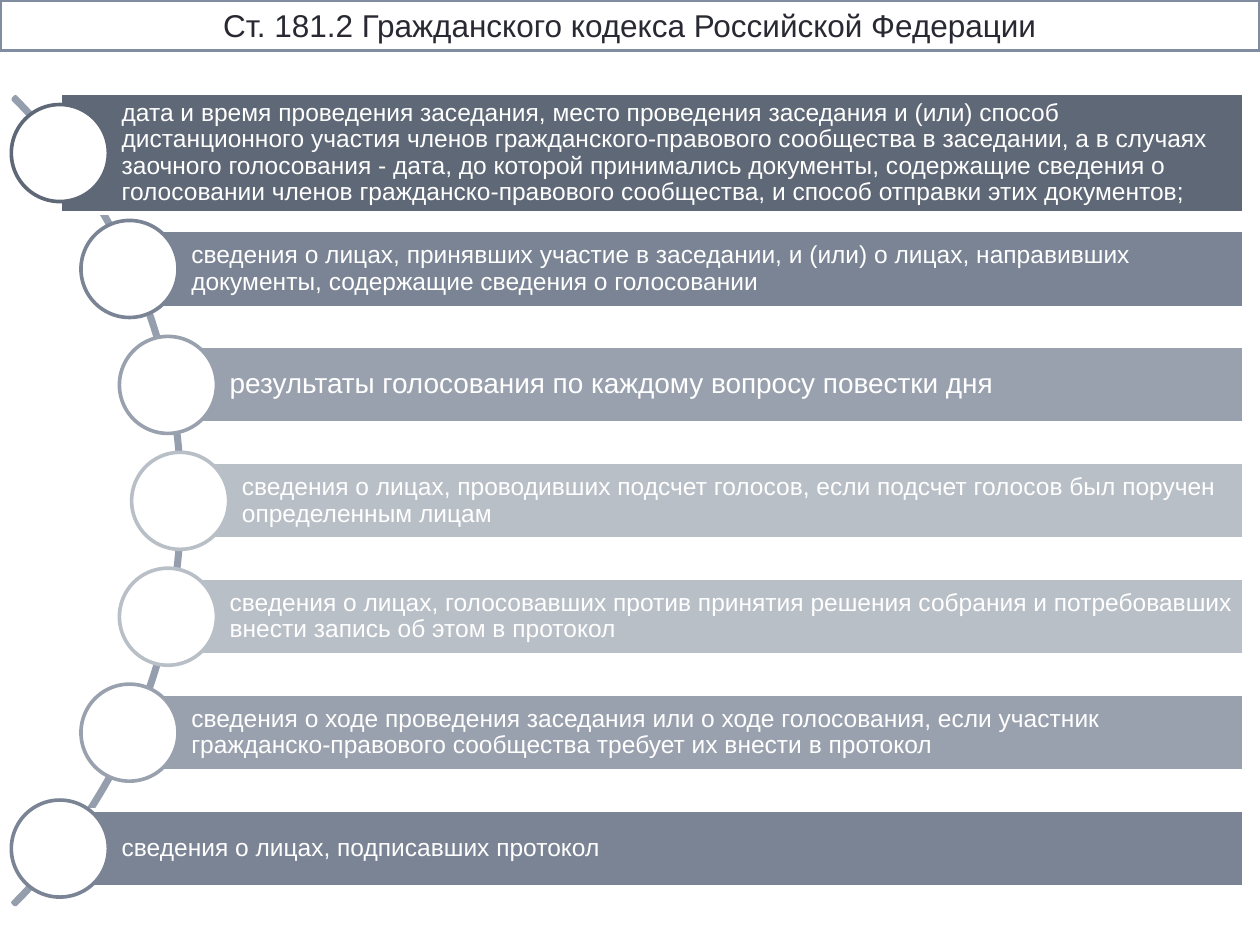
import pptx
import pptx.dml.color
import pptx.enum.shapes
import pptx.enum.text
import pptx.util

SHAPES = pptx.enum.shapes.MSO_SHAPE
ALIGN = pptx.enum.text.PP_ALIGN
ANCHOR = pptx.enum.text.MSO_ANCHOR

COLORS = {
    "white": "FFFFFF", "ink": "292934", "frame": "808DA0", "arc": "949EAD",
    "dark": "5F6876", "slate": "7A8494", "grey": "9AA1AE", "pale": "B9BFC7",
}

TITLE = "Ст. 181.2 Гражданского кодекса Российской Федерации"

# Text, colour, node centre in columns, bar height in rows, text size
ITEMS = [
    ("дата и время проведения заседания, место проведения заседания и (или) способ "
     "дистанционного участия членов гражданского-правового сообщества в заседании, "
     "а в случаях заочного голосования - дата, до которой принимались документы, "
     "содержащие сведения о голосовании членов гражданско-правового сообщества, "
     "и способ отправки этих документов;", "dark", 4.75, 9.5, 14),
    ("сведения о лицах, принявших участие в заседании, и (или) о лицах, направивших "
     "документы, содержащие сведения о голосовании", "slate", 10.28, 6.1, 14),
    ("результаты голосования по каждому вопросу повестки дня",
     "grey", 13.33, 6.1, 16),
    ("сведения о лицах, проводивших подсчет голосов, если подсчет голосов был поручен "
     "определенным лицам", "pale", 14.3, 6.1, 14),
    ("сведения о лицах, голосовавших против принятия решения собрания и потребовавших "
     "внести запись об этом в протокол", "pale", 13.33, 6.1, 14),
    ("сведения о ходе проведения заседания или о ходе голосования, если участник "
     "гражданско-правового сообщества требует их внести в протокол",
     "grey", 10.28, 6.1, 14),
    ("сведения о лицах, подписавших протокол", "slate", 4.75, 6.1, 14),
]

# Grid positions
FIRST_CENTER, PITCH = 12.15, 9.2
BAR_RIGHT, NODE_SIZE = 98.7, 7.7
ARC_BOX = (-76.2, -5.6, 90.7, 90.7)
ARC_ADJUSTMENTS = (189, 27, 0.003)


class SlideBuilder:
    """Style and current slide; lengths are cells of a 100 by 75 grid."""

    columns, rows = 100, 75
    font_name = "Arial"
    line_width = pptx.util.Pt(2.08)
    bar_frame = {
        "word_wrap": True,
        "vertical_anchor": ANCHOR.MIDDLE,
        "margin_left": pptx.util.Inches(0.49),
        "margin_top": pptx.util.Inches(0.04),
        "margin_right": pptx.util.Inches(0.04),
        "margin_bottom": pptx.util.Inches(0.04),
    }
    title_frame = {
        "word_wrap": True,
        "auto_size": pptx.enum.text.MSO_AUTO_SIZE.NONE,
        "vertical_anchor": ANCHOR.MIDDLE,
    }

    def __init__(self, deck):
        self.cell_width = deck.slide_width / self.columns
        self.cell_height = deck.slide_height / self.rows
        self.page = deck.slides.add_slide(deck.slide_layouts[5])

    def color(self, name):
        return pptx.dml.color.RGBColor.from_string(COLORS[name])

    def apply(self, target, values):
        for name, value in values.items():
            setattr(target, name, value)

    def place(self, left, top, width, height):
        return (round(left * self.cell_width), round(top * self.cell_height),
                round(width * self.cell_width), round(height * self.cell_height))

    def paint(self, shape, fill, line):
        if fill:
            shape.fill.solid()
            shape.fill.fore_color.rgb = self.color(fill)
        else:
            shape.fill.background()
        shape.line.color.rgb = self.color(line)
        shape.line.width = self.line_width

    def set_text(self, shape, text, size, color, frame, paragraph):
        self.apply(shape.text_frame, frame)
        para = shape.text_frame.paragraphs[0]
        self.apply(para, paragraph)
        span = para.add_run()
        span.text = text
        self.apply(span.font, {"name": self.font_name, "size": pptx.util.Pt(size)})
        span.font.color.rgb = self.color(color)

    def title(self, text, box):
        shape = self.page.shapes.title
        self.apply(shape, dict(zip(("left", "top", "width", "height"),
                                   self.place(*box))))
        self.paint(shape, "white", "frame")
        self.set_text(shape, text, 18, "ink", self.title_frame,
                      {"alignment": ALIGN.CENTER})

    def shape(self, kind, box, fill, line):
        shape = self.page.shapes.add_shape(kind, *self.place(*box))
        shape.shadow.inherit = False
        self.paint(shape, fill, line)
        return shape

    def arc(self, box, adjustments):
        shape = self.shape(SHAPES.BLOCK_ARC, box, None, "arc")
        for index, value in enumerate(adjustments):
            shape.adjustments[index] = value

    def bar(self, text, size, box, color):
        shape = self.shape(SHAPES.RECTANGLE, box, color, "white")
        self.set_text(shape, text, size, "white", self.bar_frame,
                      {"alignment": ALIGN.LEFT, "line_spacing": 0.9})

    def node(self, center_x, center_y, color):
        half = NODE_SIZE / 2
        box = (center_x - half, center_y - half, NODE_SIZE, NODE_SIZE)
        self.shape(SHAPES.OVAL, box, "white", color)


def main():
    deck = pptx.Presentation()
    deck.slide_width = pptx.util.Inches(10)
    deck.slide_height = pptx.util.Inches(7.5)
    builder = SlideBuilder(deck)

    # Heading
    builder.title(TITLE, (0, 0, 100, 4))

    # Arc behind the list
    builder.arc(ARC_BOX, ARC_ADJUSTMENTS)

    # Bars with their nodes on the arc
    for index, (text, color, center_x, height, size) in enumerate(ITEMS):
        center_y = FIRST_CENTER + index * PITCH
        box = (center_x, center_y - height / 2, BAR_RIGHT - center_x, height)
        builder.bar(text, size, box, color)
        builder.node(center_x, center_y, color)

    deck.save("out.pptx")


if __name__ == "__main__":
    main()
